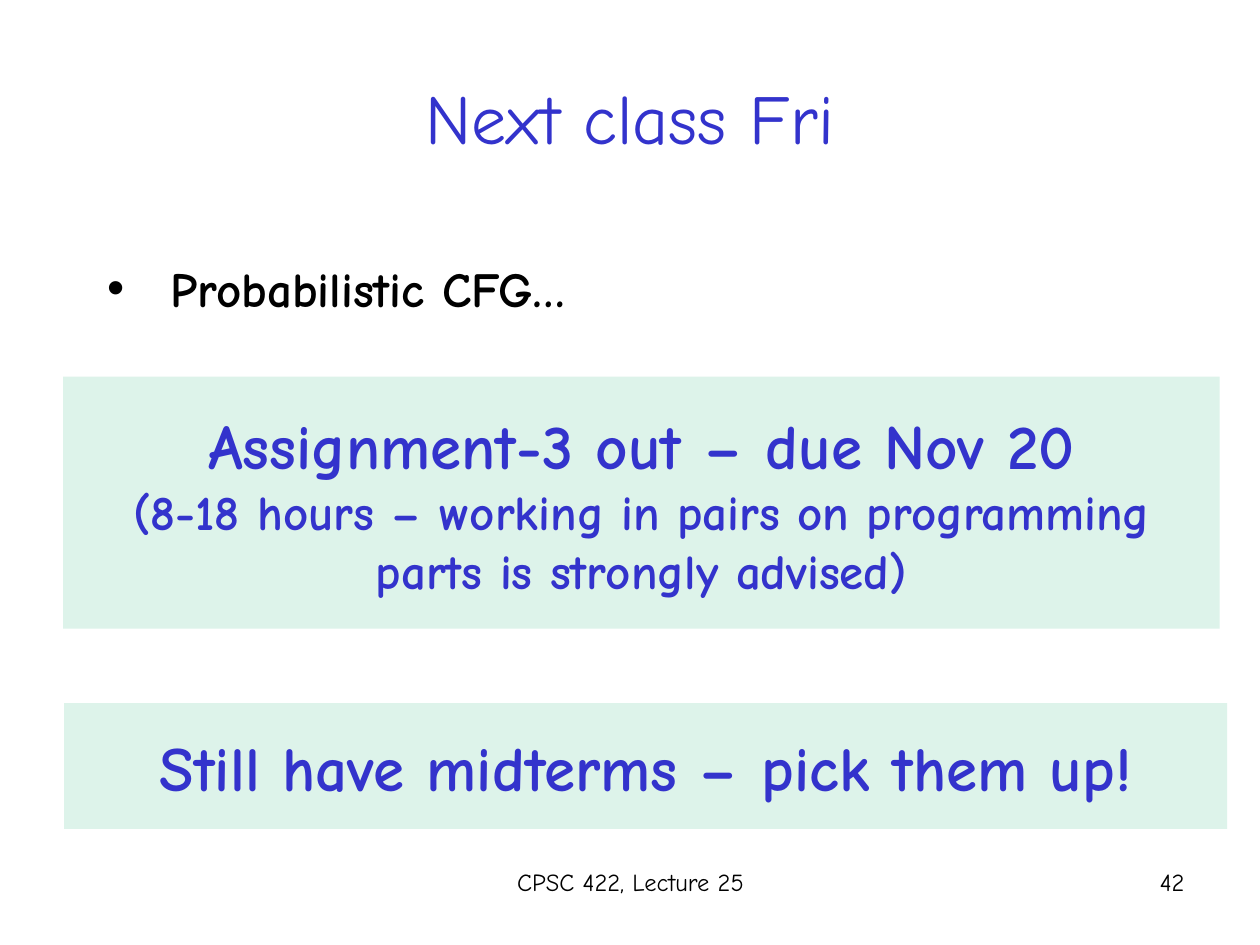
from lxml.etree import SubElement
from pptx import Presentation
from pptx.dml.color import RGBColor
from pptx.enum.shapes import MSO_SHAPE
from pptx.enum.text import MSO_ANCHOR, MSO_AUTO_SIZE, PP_ALIGN
from pptx.oxml.ns import qn
from pptx.util import Inches, Pt

BLUE = RGBColor(0x33, 0x33, 0xCC)
BLACK = RGBColor(0, 0, 0)
MINT = RGBColor(0xDD, 0xF3, 0xEA)
FONT = "Comic Neue"
COLUMNS, ROWS = 100, 75


def write(para, text, size, color=BLACK, bold=False, align=PP_ALIGN.LEFT):
    para.alignment = align
    span = para.add_run()
    span.text = text
    span.font.name = FONT
    span.font.size = Pt(size)
    span.font.bold = bold
    span.font.color.rgb = color


class LecturePage:
    def __init__(self, deck):
        self.cell_width = deck.slide_width / COLUMNS
        self.cell_height = deck.slide_height / ROWS
        self.page = deck.slides.add_slide(deck.slide_layouts[1])

    def area(self, column, row, width, height):
        return (round(column * self.cell_width), round(row * self.cell_height),
                round(width * self.cell_width), round(height * self.cell_height))

    def fit(self, holder, area, anchor):
        holder.left, holder.top, holder.width, holder.height = self.area(*area)
        frame = holder.text_frame
        frame.word_wrap = True
        frame.auto_size = MSO_AUTO_SIZE.NONE
        frame.vertical_anchor = anchor
        return frame.paragraphs[0]

    def title(self, text, area):
        para = self.fit(self.page.shapes.title, area, MSO_ANCHOR.MIDDLE)
        write(para, text, 40, BLUE, align=PP_ALIGN.CENTER)

    def bullet(self, text, area):
        para = self.fit(self.page.placeholders[1], area, MSO_ANCHOR.TOP)
        para.space_before = Pt(5.6)
        write(para, text, 28, bold=True)
        properties = para._p.get_or_add_pPr()
        properties.set("marL", str(Inches(0.5)))
        properties.set("indent", str(-Inches(0.5)))
        SubElement(properties, qn("a:buChar"), char="•")

    def label(self, text, area, align):
        box = self.page.shapes.add_textbox(*self.area(*area))
        box.text_frame.word_wrap = True
        write(box.text_frame.paragraphs[0], text, 14, align=align)

    def notice(self, lines, area):
        box = self.page.shapes.add_shape(MSO_SHAPE.RECTANGLE, *self.area(*area))
        box.shadow.inherit = False
        box.fill.solid()
        box.fill.fore_color.rgb = MINT
        box.line.fill.background()
        frame = box.text_frame
        frame.word_wrap = True
        frame.vertical_anchor = MSO_ANCHOR.MIDDLE
        for index, (text, size) in enumerate(lines):
            para = frame.add_paragraph() if index else frame.paragraphs[0]
            write(para, text, size, BLUE, bold=True, align=PP_ALIGN.CENTER)


def main():
    deck = Presentation()
    deck.slide_width, deck.slide_height = Inches(10), Inches(7.5)
    page = LecturePage(deck)
    page.title("Next class Fri", (5, 3, 90, 12.5))
    page.bullet("Probabilistic CFG…", (7.5, 20, 89.9, 10))
    page.label("CPSC 422, Lecture 25", (34.2, 68.3, 31.7, 5.2), PP_ALIGN.CENTER)
    page.label("42", (71.7, 68.3, 23.3, 5.2), PP_ALIGN.RIGHT)
    page.notice([
        ("Assignment-3 out – due Nov 20", 36),
        ("(8-18 hours – working in pairs on programming parts is strongly advised)", 28),
    ], (5, 29.9, 91.8, 20))
    page.notice([("Still have midterms – pick them up!", 36)], (5.1, 55.8, 92.3, 10))
    deck.save("out.pptx")


if __name__ == "__main__":
    main()
